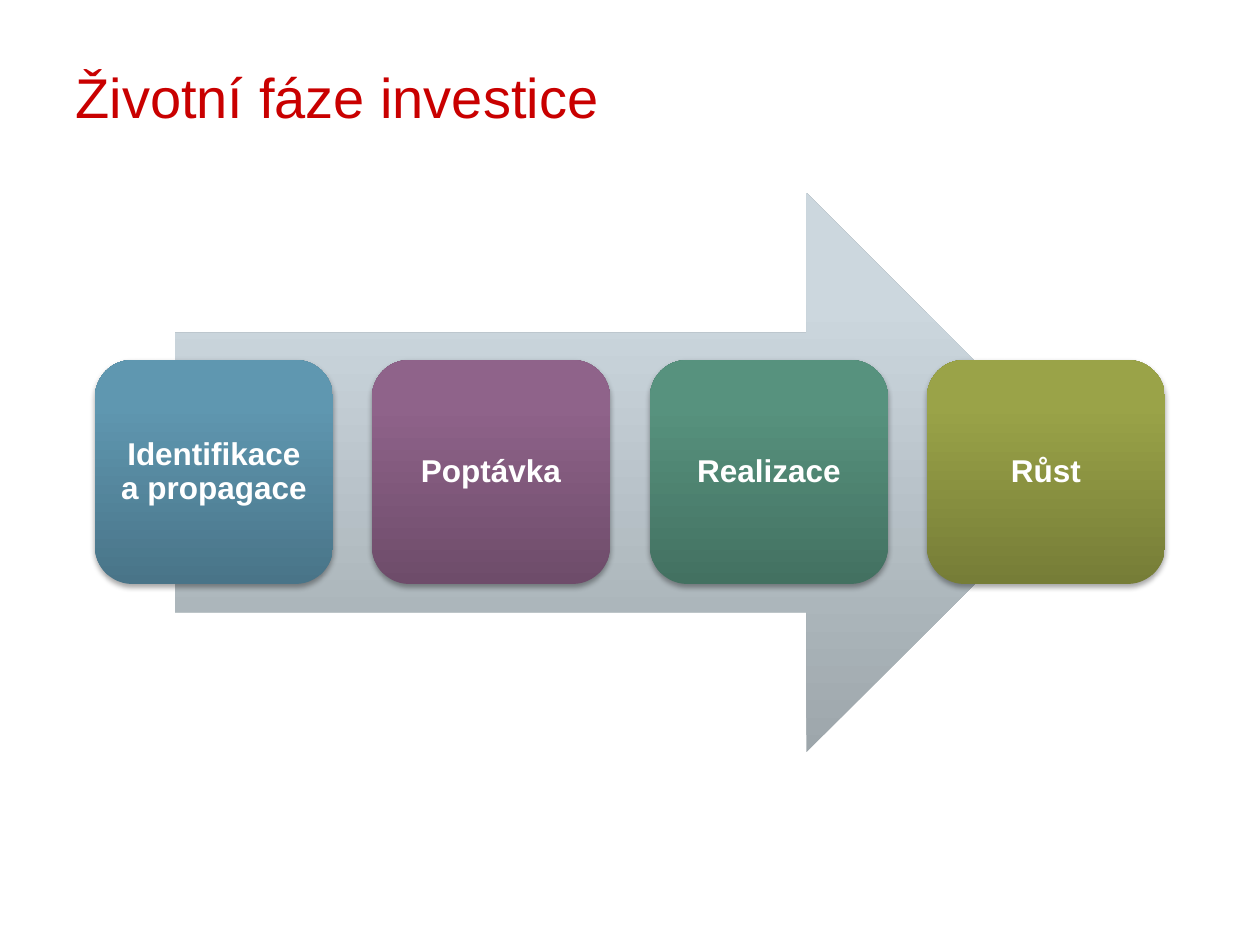
from copy import deepcopy
from dataclasses import dataclass

from lxml import etree
from pptx import Presentation
from pptx import util as u
from pptx.dml.color import RGBColor
from pptx.enum import shapes, text
from pptx.oxml.ns import qn

EMU_PER_PX = 914400 / 126
FONT = "Arial"
BOX_W, BOX_H, BOX_TOP = 238, 224, 360
FIRST_LEFT, LAST_LEFT = 95, 927


@dataclass
class Phase:
    label: str
    gradient: tuple[str, str, str]


PHASES = [
    Phase("Identifikace a propagace", ("497488", "5F97B0", "5E98B2")),
    Phase("Poptávka", ("6E4C6A", "8F638A", "90628B")),
    Phase("Realizace", ("437161", "57927E", "56947F")),
    Phase("Růst", ("767D37", "9AA348", "9CA546")),
]
ARROW_GRADIENT = ("9DA6AB", "CCD7DE", "CCD8DF")


def px(n: int) -> u.Emu:
    return u.Emu(round(n * EMU_PER_PX))


def rgb(value: str) -> RGBColor:
    return RGBColor.from_string(value)


def fill_upward(sp, colors: tuple[str, str, str]) -> None:
    """Fill with a three-stop gradient running from bottom to top."""
    sp.fill.gradient()
    sp.fill.gradient_angle = 90
    stops = sp._element.spPr.find(".//" + qn("a:gsLst"))
    stops.insert(1, deepcopy(stops[0]))
    for stop, color, position in zip(sp.fill.gradient_stops, colors, (0, 0.8, 1)):
        stop.color.rgb = rgb(color)
        stop.position = position


def add_drop_shadow(sp) -> None:
    effects = sp._element.spPr.find(qn("a:effectLst"))
    shadow = etree.SubElement(
        effects, qn("a:outerShdw"), blurRad=str(u.Pt(3.1)), dist=str(u.Pt(1.8)),
        dir="5400000", rotWithShape="0")
    color = etree.SubElement(shadow, qn("a:srgbClr"), val="000000")
    etree.SubElement(color, qn("a:alpha"), val="35000")


def add_gradient_shape(s, kind, left: int, top: int, width: int, height: int,
                       colors: tuple[str, str, str]):
    sp = s.shapes.add_shape(kind, px(left), px(top), px(width), px(height))
    sp.shadow.inherit = False
    sp.line.fill.background()
    fill_upward(sp, colors)
    return sp


def add_phase(s, phase: Phase, left: int) -> None:
    sp = add_gradient_shape(s, shapes.MSO_SHAPE.ROUNDED_RECTANGLE,
                            left, BOX_TOP, BOX_W, BOX_H, phase.gradient)
    add_drop_shadow(sp)
    tf = sp.text_frame
    tf.word_wrap = True
    tf.vertical_anchor = text.MSO_ANCHOR.MIDDLE
    tf.margin_left = tf.margin_right = tf.margin_top = tf.margin_bottom = px(9)
    p = tf.paragraphs[0]
    p.text = phase.label
    p.alignment = text.PP_ALIGN.CENTER
    p.line_spacing = 0.9
    p.font.name, p.font.size, p.font.bold = FONT, u.Pt(18), True
    p.font.color.rgb = rgb("FFFFFF")


def add_title(s, title: str) -> None:
    sp = s.shapes.title
    sp.left, sp.top, sp.width, sp.height = px(63), px(38), px(1133), px(117)
    tf = sp.text_frame
    tf.vertical_anchor = text.MSO_ANCHOR.MIDDLE
    p = tf.paragraphs[0]
    p.text = title
    p.alignment = text.PP_ALIGN.LEFT
    p.font.name, p.font.size = FONT, u.Pt(32)
    p.font.color.rgb = rgb("C90000")


def main() -> None:
    prs = Presentation()
    prs.slide_width, prs.slide_height = px(1260), px(945)
    s = prs.slides.add_slide(prs.slide_layouts[5])
    add_title(s, "Životní fáze investice")
    add_gradient_shape(s, shapes.MSO_SHAPE.RIGHT_ARROW, 175, 193, 911, 559, ARROW_GRADIENT)
    for i, phase in enumerate(PHASES):
        left = FIRST_LEFT + round(i * (LAST_LEFT - FIRST_LEFT) / (len(PHASES) - 1))
        add_phase(s, phase, left)
    prs.save("out.pptx")


if __name__ == "__main__":
    main()
